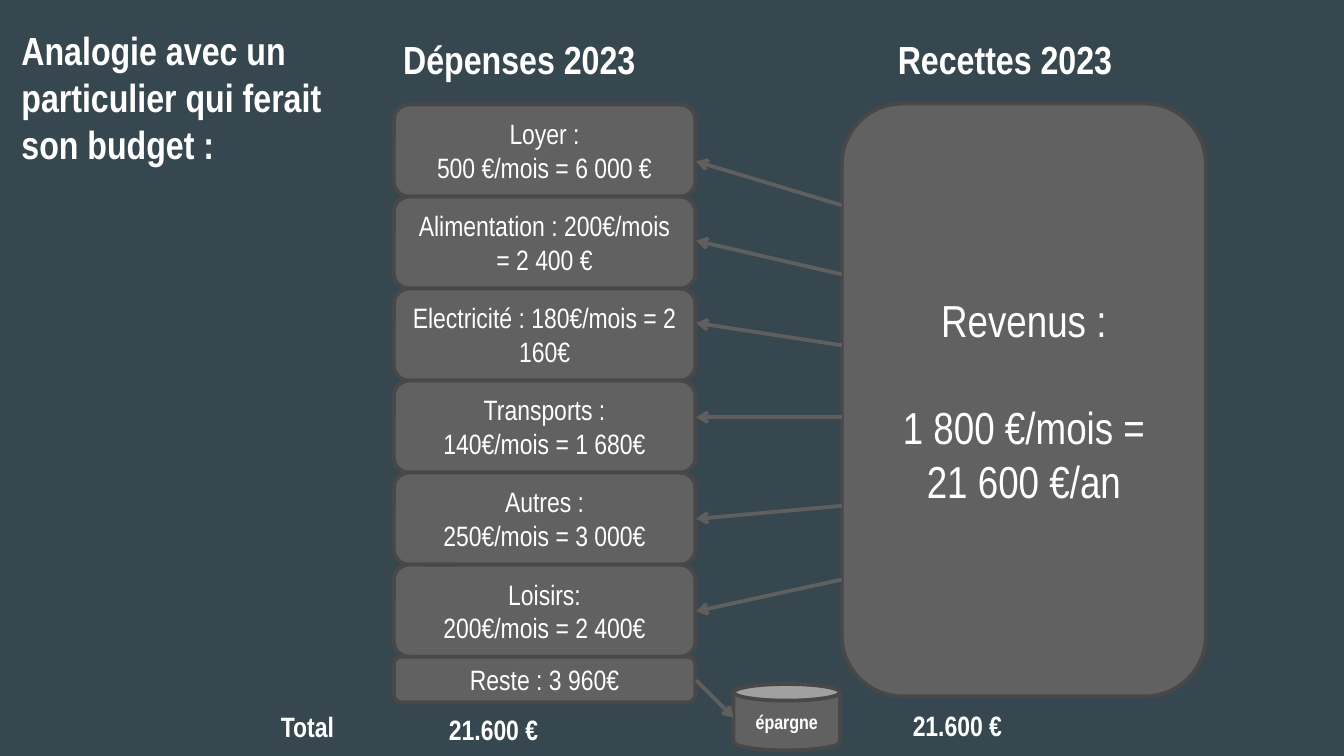
from lxml.etree import SubElement
from pptx import Presentation
from pptx.dml.color import RGBColor
from pptx.enum.shapes import MSO_CONNECTOR as Connector, MSO_SHAPE as Shape
from pptx.enum.text import MSO_ANCHOR as Anchor, MSO_AUTO_SIZE as AutoSize, PP_ALIGN as Align
from pptx.oxml.ns import qn
from pptx.util import Pt

COLORS = {"background": "37474F", "box": "616161", "border": "484848", "arrow": "5F5F5F", "text": "FFFFFF"}


class BudgetSlide:
    """Holds the budget slide and its style."""

    font_name = "Arial Narrow"
    line_width = Pt(2)

    def __init__(self, presentation):
        self.slide = presentation.slides.add_slide(presentation.slide_layouts[5])
        self.paint(self.slide.background.fill, "background")

    def paint(self, fill, color):
        fill.solid()
        fill.fore_color.rgb = RGBColor.from_string(COLORS[color])

    def set_text(self, text_frame, text, size, bold, align, before=0):
        text_frame.text = text
        text_frame.word_wrap = True
        for paragraph in text_frame.paragraphs:
            paragraph.alignment = align
            paragraph.space_before = Pt(before)
            for run in paragraph.runs:
                run.font.name = self.font_name
                run.font.size = Pt(size)
                run.font.bold = bold
                run.font.color.rgb = RGBColor.from_string(COLORS["text"])

    def heading(self, shape, text, size):
        text_frame = shape.text_frame
        self.set_text(text_frame, text, size, True, Align.LEFT, 0.8)
        text_frame.auto_size = AutoSize.NONE
        text_frame.vertical_anchor = Anchor.TOP
        text_frame.margin_left = text_frame.margin_right = Pt(5)
        text_frame.margin_top = text_frame.margin_bottom = Pt(3)

    def title(self, text, left, top, width, height):
        title = self.slide.shapes.title
        title.left, title.top, title.width, title.height = Pt(left), Pt(top), Pt(width), Pt(height)
        self.heading(title, text, 21)

    def label(self, text, left, top, width, height, size):
        label = self.slide.shapes.add_textbox(Pt(left), Pt(top), Pt(width), Pt(height))
        self.heading(label, text, size)

    def box(self, text, left, top, width, height, size=15, kind=Shape.ROUNDED_RECTANGLE, bold=False):
        box = self.slide.shapes.add_shape(kind, Pt(left), Pt(top), Pt(width), Pt(height))
        box.shadow.inherit = False
        self.paint(box.fill, "box")
        self.paint(box.line.fill, "border")
        box.line.width = self.line_width
        box.text_frame.vertical_anchor = Anchor.MIDDLE
        self.set_text(box.text_frame, text, size, bold, Align.CENTER)
        return box

    def arrow(self, start_x, start_y, end_x, end_y):
        arrow = self.slide.shapes.add_connector(
            Connector.STRAIGHT, Pt(start_x), Pt(start_y), Pt(end_x), Pt(end_y))
        self.paint(arrow.line.fill, "arrow")
        arrow.line.width = self.line_width
        properties = arrow.element.spPr
        SubElement(properties.find(qn("a:ln")), qn("a:tailEnd"), type="arrow")
        SubElement(properties, qn("a:effectLst"))


def main():
    presentation = Presentation()
    presentation.slide_width, presentation.slide_height = Pt(720), Pt(405)
    budget = BudgetSlide(presentation)

    budget.title("Analogie avec un particulier qui ferait son budget :", 6.5, 11, 178, 84)
    budget.label("Dépenses 2023", 211, 16, 175, 32, 21)
    budget.label("Recettes 2023", 476, 16, 175, 32, 21)

    income = budget.box("Revenus :\n1 800 €/mois =\n21 600 €/an", 451, 55.5, 195, 317.5, 24)
    income.text_frame.paragraphs[1].space_before = Pt(28.7)

    expenses = [
        ("Loyer :\n500 €/mois = 6 000 €", 110, 86.5),
        ("Alimentation : 200€/mois = 2 400 €", 147, 129),
        ("Electricité : 180€/mois = 2 160€", 185, 173),
        ("Transports :\n140€/mois = 1 680€", 223.5, 223.5),
        ("Autres :\n250€/mois = 3 000€", 271, 278),
        ("Loisirs:\n200€/mois = 2 400€", 310.5, 327.5),
    ]
    first_top, pitch = 56, 49.3
    for index, (text, start_y, end_y) in enumerate(expenses):
        budget.box(text, 211, first_top + index * pitch, 161.5, pitch)
        budget.arrow(451, start_y, 373, end_y)
    budget.box("Reste : 3 960€", 211, first_top + len(expenses) * pitch, 161.5, 24.5)

    budget.box("épargne", 393, 366.5, 57, 35.5, 10.5, Shape.CAN, True)
    budget.arrow(373, 364.5, 393, 384.5)

    for text, left, top, width in [("Total", 145.5, 377, 59), ("21.600 €", 235.5, 378.5, 96),
                                   ("21.600 €", 484, 376.5, 96)]:
        budget.label(text, left, top, width, 26, 15)

    presentation.save("out.pptx")


if __name__ == "__main__":
    main()
